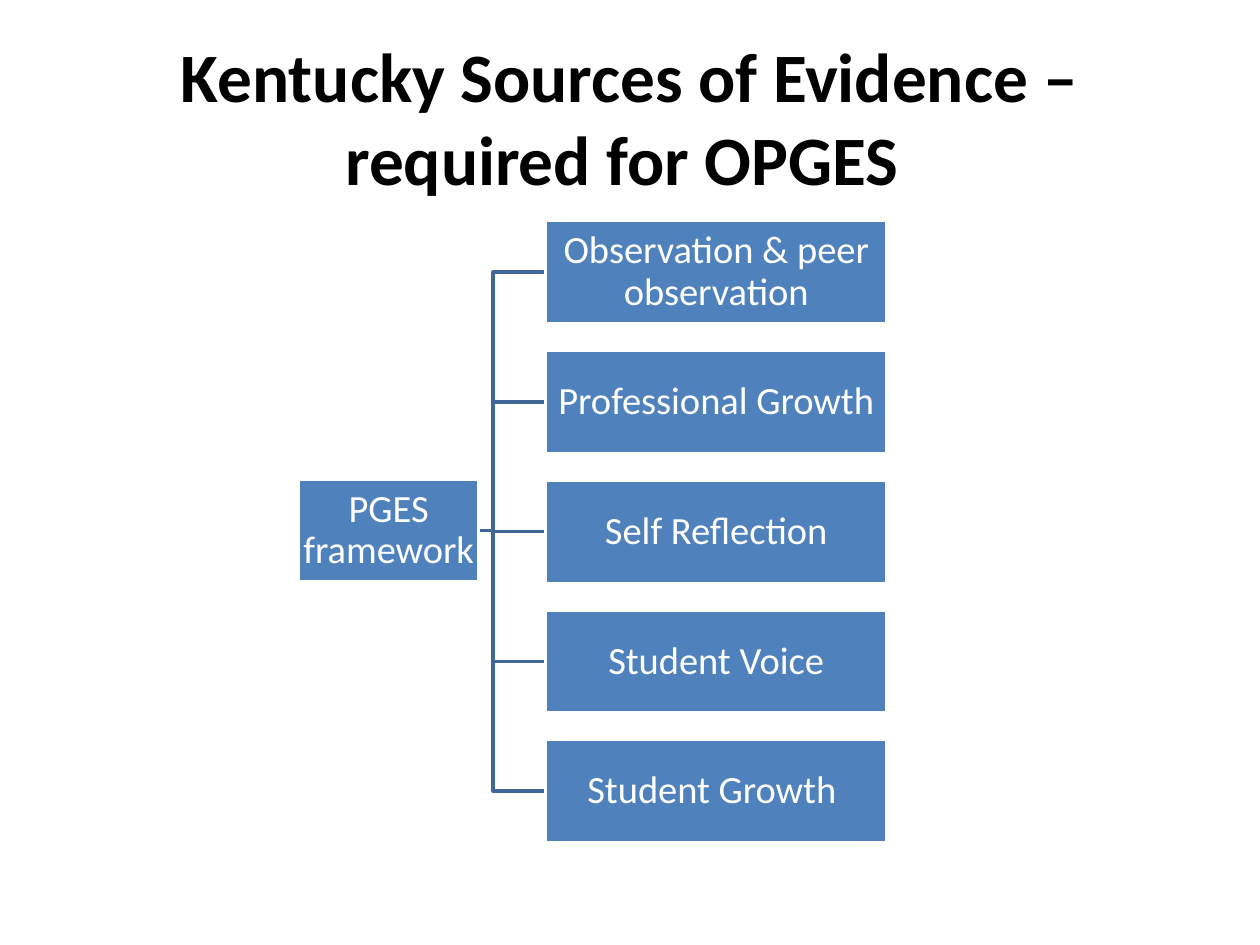
from pptx import Presentation
from pptx.dml.color import RGBColor
from pptx.enum.shapes import MSO_SHAPE
from pptx.enum.text import MSO_ANCHOR, MSO_AUTO_SIZE, PP_ALIGN
from pptx.util import Inches, Pt

BLUE, DARK_BLUE, WHITE, BLACK = "4F81BD", "3F6797", "FFFFFF", "000000"
BOX_HEIGHT, ROW_STEP, FIRST_ROW = 0.82, 1.03, 1.75
ROOT_LEFT, ROOT_TOP, ROOT_WIDTH = 2.37, 3.8, 1.43
SOURCE_LEFT, SOURCE_WIDTH = 4.33, 2.71
LINK_LEFT = 3.5
sources = ["Observation & peer observation", "Professional Growth",
           "Self Reflection", "Student Voice", "Student Growth "]


def write(shape, text, size, color, bold=False, inset=0.02, spacing=0.9):
    frame = shape.text_frame
    frame.text = text
    margin = Inches(inset)
    frame_format = {"word_wrap": True, "auto_size": MSO_AUTO_SIZE.NONE,
                    "vertical_anchor": MSO_ANCHOR.MIDDLE,
                    "margin_left": margin, "margin_right": margin,
                    "margin_top": margin, "margin_bottom": margin}
    for name, value in frame_format.items():
        setattr(frame, name, value)
    paragraph = frame.paragraphs[0]
    paragraph.alignment = PP_ALIGN.CENTER
    paragraph.line_spacing = spacing
    font = paragraph.runs[0].font
    for name, value in {"name": "Calibri", "size": Pt(size), "bold": bold}.items():
        setattr(font, name, value)
    font.color.rgb = RGBColor.from_string(color)


def outline(shape, color):
    shape.shadow.inherit = False
    shape.line.color.rgb = RGBColor.from_string(color)
    shape.line.width = Pt(2)


presentation = Presentation()
presentation.slide_width, presentation.slide_height = Inches(10), Inches(7.5)
slide = presentation.slides.add_slide(presentation.slide_layouts[5])

title = slide.shapes.title
for name, value in {"left": 0.5, "top": 0.3, "width": 9, "height": 1.25}.items():
    setattr(title, name, Inches(value))
write(title, "Kentucky Sources of Evidence – required for OPGES ", 39.6, BLACK,
      bold=True, inset=0.05, spacing=1.0)

# Branches go first so that the boxes cover their ends
root_middle = Inches(ROOT_TOP + BOX_HEIGHT / 2)
link_start, link_end = Inches(LINK_LEFT), Inches(SOURCE_LEFT)
bend = (link_start + link_end) // 2
source_tops = [FIRST_ROW + row * ROW_STEP for row in range(len(sources))]
for top in source_tops:
    source_middle = Inches(top + BOX_HEIGHT / 2)
    builder = slide.shapes.build_freeform(link_start, root_middle)
    builder.add_line_segments([(bend, root_middle), (bend, source_middle),
                               (link_end, source_middle)], close=False)
    branch = builder.convert_to_shape()
    branch.fill.background()
    outline(branch, DARK_BLUE)

boxes = [("PGES framework", ROOT_LEFT, ROOT_TOP, ROOT_WIDTH)]
boxes += [(text, SOURCE_LEFT, top, SOURCE_WIDTH)
          for text, top in zip(sources, source_tops)]
for text, left, top, width in boxes:
    box = slide.shapes.add_shape(MSO_SHAPE.RECTANGLE, Inches(left), Inches(top),
                                 Inches(width), Inches(BOX_HEIGHT))
    box.fill.solid()
    box.fill.fore_color.rgb = RGBColor.from_string(BLUE)
    outline(box, WHITE)
    write(box, text, 22, WHITE)

presentation.save("out.pptx")
